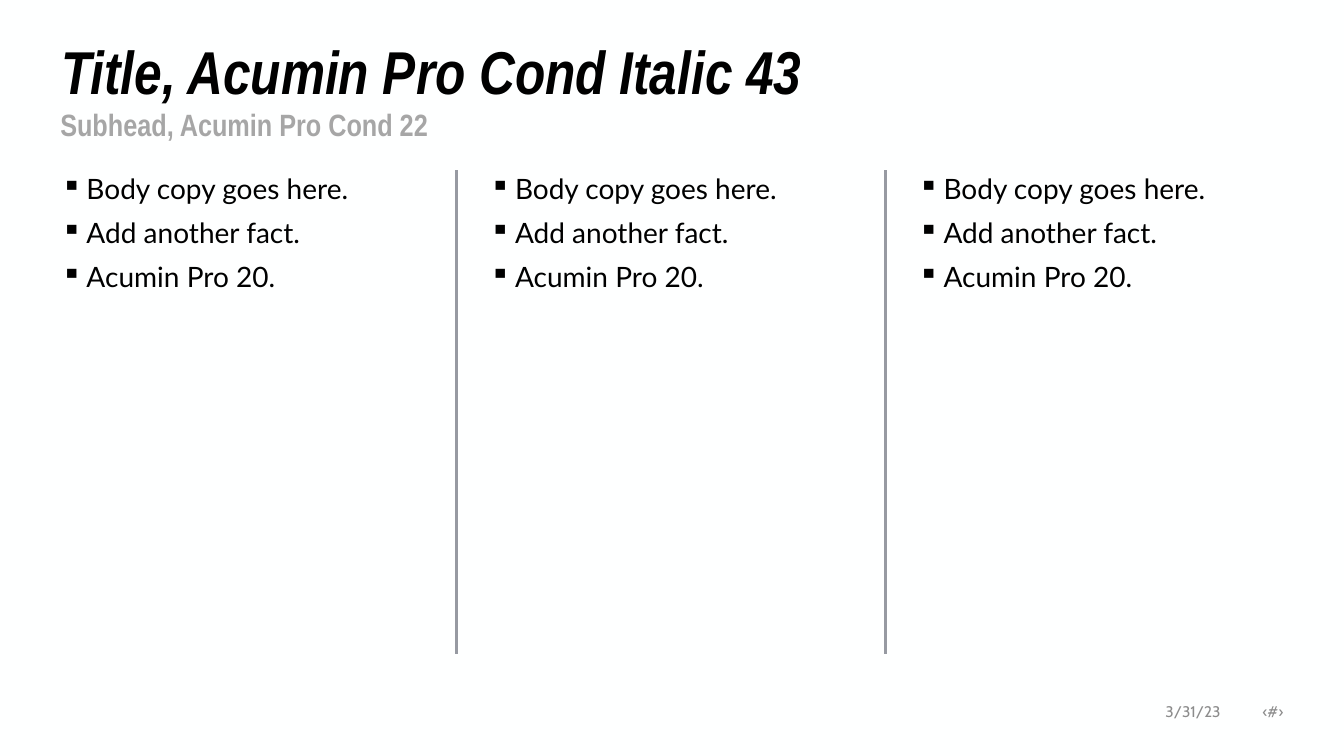
from lxml import etree
from pptx import Presentation
from pptx.dml.color import RGBColor
from pptx.enum.shapes import MSO_CONNECTOR
from pptx.enum.text import MSO_ANCHOR
from pptx.oxml.ns import qn
from pptx.util import Inches, Pt

STRAIGHT = MSO_CONNECTOR.STRAIGHT
TOP, MIDDLE = MSO_ANCHOR.TOP, MSO_ANCHOR.MIDDLE

BACKGROUND = RGBColor(0xFE, 0xFF, 0xFF)
BLACK = RGBColor(0x00, 0x00, 0x00)
SUBHEAD_GRAY = RGBColor(0xA6, 0xA6, 0xA6)
DIVIDER_GRAY = RGBColor(0x97, 0x9A, 0xA2)
FOOTER_GRAY = RGBColor(0x8C, 0x8C, 0x8C)

HEADING_FONT, BODY_FONT, FOOTER_FONT = "Arial Narrow", "Lato", "Cabin"

FACTS = ["Body copy goes here.", "Add another fact.", "Acumin Pro 20."]
COLUMN_COUNT = 3
COLUMN_LEFT, COLUMN_PITCH, COLUMN_WIDTH = 0.51, 4.25, 3.84
COLUMN_TOP, COLUMN_HEIGHT = 1.69, 4.8
FIRST_DIVIDER = 4.53


def add_text(slide, left, top, width, height, lines, anchor=TOP):
    box = slide.shapes.add_textbox(
        Inches(left), Inches(top), Inches(width), Inches(height))
    text_frame = box.text_frame
    text_frame.word_wrap = True
    text_frame.vertical_anchor = anchor
    text_frame.text = "\n".join(lines)
    return text_frame.paragraphs


def style_paragraph(paragraph, font_name, size, color, bold=False, italic=False):
    for run in paragraph.runs:
        font = run.font
        font.name = font_name
        font.size = Pt(size)
        font.bold = bold
        font.italic = italic
        font.color.rgb = color


def add_heading(slide, left, top, width, height, text, size, color,
                italic=False, anchor=TOP):
    paragraph = add_text(slide, left, top, width, height, [text], anchor)[0]
    paragraph.line_spacing = 0.9
    style_paragraph(paragraph, HEADING_FONT, size, color, True, italic)


def add_bullet(paragraph):
    properties = paragraph._p.get_or_add_pPr()
    properties.set("marL", str(Inches(0.25)))
    properties.set("indent", str(-Inches(0.25)))
    etree.SubElement(properties, qn("a:buChar"), char="▪")


def add_column(slide, left):
    paragraphs = add_text(
        slide, left, COLUMN_TOP, COLUMN_WIDTH, COLUMN_HEIGHT, FACTS)
    for index, paragraph in enumerate(paragraphs):
        add_bullet(paragraph)
        paragraph.line_spacing = 0.9
        if index:
            paragraph.space_before = Pt(10)
        style_paragraph(paragraph, BODY_FONT, 20, BLACK)


def add_divider(slide, x):
    divider = slide.shapes.add_connector(
        STRAIGHT, Inches(x), Inches(COLUMN_TOP),
        Inches(x), Inches(COLUMN_TOP + COLUMN_HEIGHT))
    divider.line.color.rgb = DIVIDER_GRAY
    divider.line.width = Pt(2.25)
    etree.SubElement(divider._element.spPr, qn("a:effectLst"))


def add_footer(slide):
    """Date and page mark, each ending at a right-aligned tab stop."""
    paragraph = add_text(
        slide, 10.88, 6.88, 1.95, 0.35, ["\t3/31/23\t‹#›"], MIDDLE)[0]
    tabs = etree.SubElement(paragraph._p.get_or_add_pPr(), qn("a:tabLst"))
    for position in (1.13, 1.75):
        etree.SubElement(tabs, qn("a:tab"), pos=str(Inches(position)), algn="r")
    style_paragraph(paragraph, FOOTER_FONT, 11, FOOTER_GRAY)


def main():
    presentation = Presentation()
    presentation.slide_width = Inches(13.33)
    presentation.slide_height = Inches(7.5)
    slide = presentation.slides.add_slide(presentation.slide_layouts[6])
    slide.background.fill.solid()
    slide.background.fill.fore_color.rgb = BACKGROUND

    add_heading(slide, 0.51, 0.42, 12.32, 0.64,
                "Title, Acumin Pro Cond Italic 43", 43.2, BLACK, True, MIDDLE)
    for index in range(COLUMN_COUNT):
        add_column(slide, COLUMN_LEFT + index * COLUMN_PITCH)
    add_heading(slide, 0.5, 1.04, 12.33, 0.4,
                "Subhead, Acumin Pro Cond 22", 22, SUBHEAD_GRAY)
    for index in range(COLUMN_COUNT - 1):
        add_divider(slide, FIRST_DIVIDER + index * COLUMN_PITCH)
    add_footer(slide)
    presentation.save("out.pptx")


if __name__ == "__main__":
    main()
